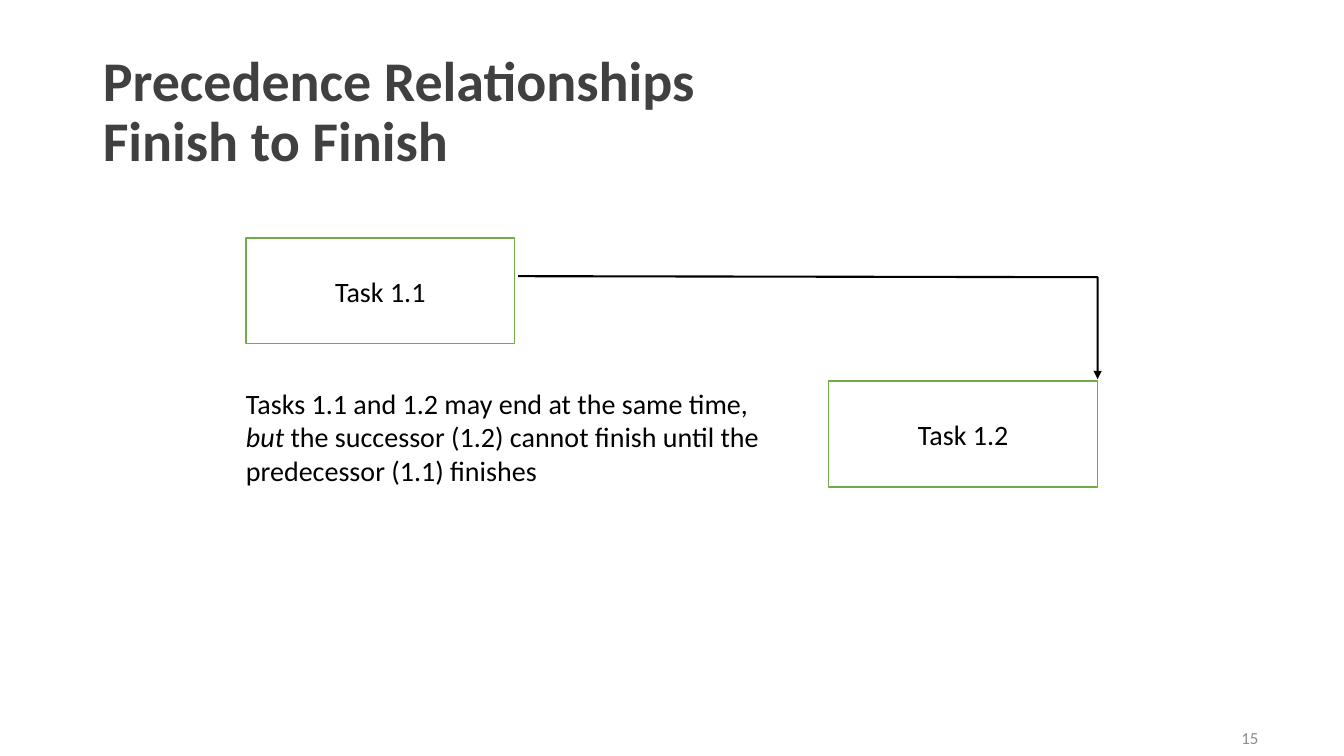
from lxml.etree import SubElement
from pptx import Presentation
from pptx.dml.color import RGBColor as RGB
from pptx.enum.shapes import MSO_SHAPE as SHAPE
from pptx.enum.text import MSO_ANCHOR as ANCHOR, MSO_AUTO_SIZE as FIT, PP_ALIGN as ALIGN
from pptx.oxml.ns import qn
from pptx.util import Inches, Pt

HUES = {"title": "404041", "ink": "000000", "edge": "70AD47",
        "paper": "FFFFFF", "page": "8C8C8C"}
FONT = "Calibri"


def hue(name):
    return RGB.from_string(HUES[name])


def write(frame, *parts, size=20, color="ink", bold=False, align=ALIGN.LEFT,
          anchor=ANCHOR.TOP, inset=0, leading=1.0):
    """Fill a frame with one paragraph; a part given as a tuple is italic."""
    frame.word_wrap = True
    frame.auto_size = FIT.NONE
    frame.vertical_anchor = anchor
    frame.margin_left = frame.margin_right = Inches(inset)
    frame.margin_top = frame.margin_bottom = Inches(inset / 2)
    para = frame.paragraphs[0]
    para.alignment, para.line_spacing = align, leading
    for part in parts:
        italic = isinstance(part, tuple)
        for row, line in enumerate((part[0] if italic else part).split("\n")):
            if row:
                para.add_line_break()
            run = para.add_run()
            run.text = line
            font = run.font
            font.name, font.size = FONT, Pt(size)
            font.bold, font.italic = bold, italic
            font.color.rgb = hue(color)


class Page:
    """A slide whose lengths are given in percent of its width and height."""

    def __init__(self, deck):
        self.wide, self.high = deck.slide_width, deck.slide_height
        self.slide = deck.slides.add_slide(deck.slide_layouts[5])
        self.shapes = self.slide.shapes

    def spot(self, x, y):
        return round(self.wide * x / 100), round(self.high * y / 100)

    def area(self, x, y, w, h):
        return *self.spot(x, y), *self.spot(w, h)

    def title(self, text, *area):
        head = self.shapes.title
        head.left, head.top, head.width, head.height = self.area(*area)
        write(head.text_frame, text, size=40, color="title", bold=True,
              anchor=ANCHOR.MIDDLE, inset=0.1, leading=0.9)

    def note(self, parts, *area, **style):
        box = self.shapes.add_textbox(*self.area(*area))
        write(box.text_frame, *parts, **style)

    def task(self, name, *area):
        box = self.shapes.add_shape(SHAPE.RECTANGLE, *self.area(*area))
        box.shadow.inherit = False
        box.fill.solid()
        box.fill.fore_color.rgb = hue("paper")
        box.line.color.rgb = hue("edge")
        box.line.width = Pt(1)
        write(box.text_frame, name, align=ALIGN.CENTER, anchor=ANCHOR.MIDDLE)

    def arrow(self, start, *stops):
        """Draw a bent line with a head at its last point."""
        pen = self.shapes.build_freeform(*self.spot(*start))
        pen.add_line_segments([self.spot(*stop) for stop in stops], close=False)
        bend = pen.convert_to_shape()
        bend.shadow.inherit = False
        bend.fill.background()
        bend.line.color.rgb = hue("ink")
        bend.line.width = Pt(1.5)
        SubElement(bend.line._get_or_add_ln(), qn("a:tailEnd"), type="triangle")


def main():
    deck = Presentation()
    deck.slide_width, deck.slide_height = Inches(13.33), Inches(7.5)
    page = Page(deck)
    page.title("Precedence Relationships\nFinish to Finish", 6.9, 5.33, 86.27, 19.33)

    left, right, wide, high = 18.3, 61.67, 20, 14
    upper, lower = 31.47, 50.4
    page.note(["Tasks 1.1 and 1.2 may end at the same time, ", ("but ",),
               "the successor (1.2) cannot finish until the predecessor (1.1) finishes"],
              left, 51.07, 39.16, 18.13)
    corner = right + wide
    page.arrow((left + wide + 0.25, 36.53), (corner, 36.67), (corner, lower - 0.25))
    page.task("Task 1.2", right, lower, wide, high)
    page.task("Task 1.1", left, upper, wide, high)
    page.note(["15"], 71.87, 94.93, 22.5, 5.33, size=12, color="page",
              align=ALIGN.RIGHT, anchor=ANCHOR.MIDDLE, inset=0.1)
    deck.save("out.pptx")


if __name__ == "__main__":
    main()
